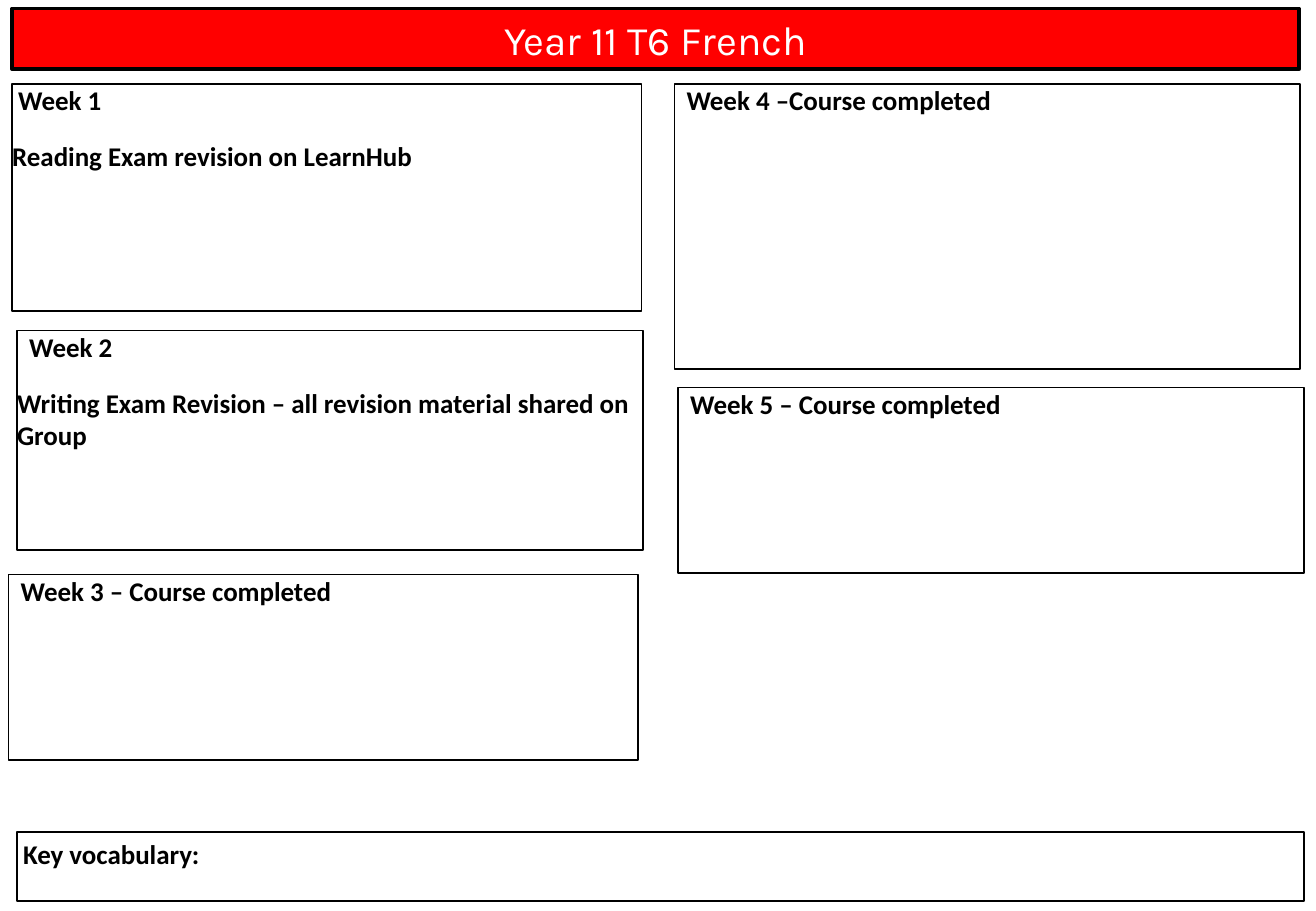
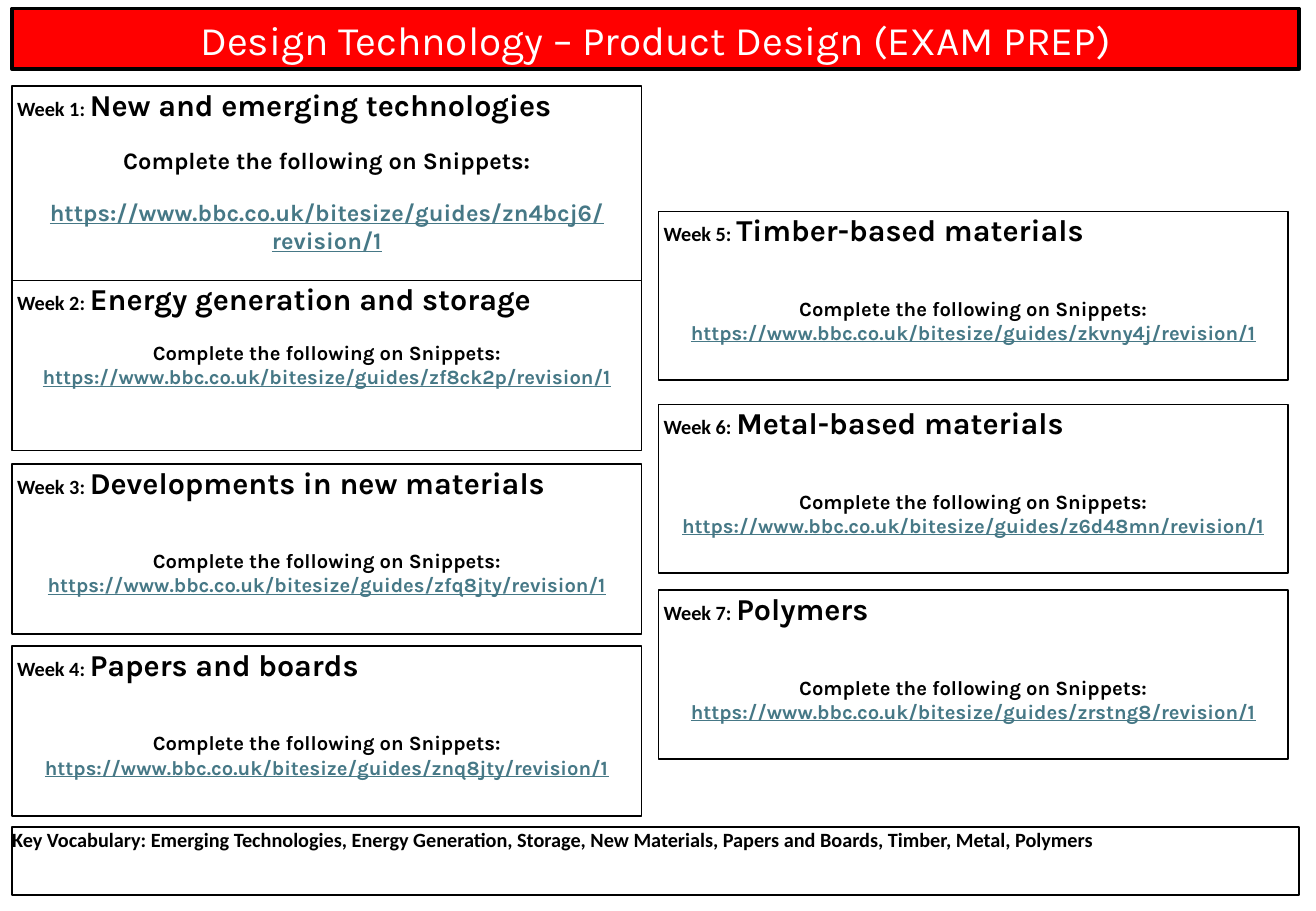
from dataclasses import dataclass

from pptx import Presentation
from pptx.dml.color import RGBColor
from pptx.enum.shapes import MSO_SHAPE
from pptx.enum.text import MSO_ANCHOR, MSO_AUTO_SIZE, PP_ALIGN
from pptx.util import Inches, Pt

RECTANGLE = MSO_SHAPE.RECTANGLE
TOP, MIDDLE = MSO_ANCHOR.TOP, MSO_ANCHOR.MIDDLE
NO_AUTOFIT = MSO_AUTO_SIZE.NONE
LEFT, CENTER = PP_ALIGN.LEFT, PP_ALIGN.CENTER
TITLE_ONLY = 5


@dataclass(frozen=True)
class Theme:
    """Colours, fonts, type sizes and line widths of the planner."""
    band: RGBColor = RGBColor(0xFF, 0x00, 0x00)
    ink: RGBColor = RGBColor(0x00, 0x00, 0x00)
    paper: RGBColor = RGBColor(0xFF, 0xFF, 0xFF)
    link: RGBColor = RGBColor(0x46, 0x78, 0x86)
    label_font: str = "Calibri"
    topic_font: str = "Karla"
    title_size: int = 24
    topic_size: int = 18
    label_size: int = 16
    lead_size: int = 14
    small_size: int = 12
    band_line: float = 2.25
    box_line: float = 1
    gap: float = 13.9
    wide_gap: float = 28.5


@dataclass(frozen=True)
class Box:
    """Place and size of a region, in inches."""
    left: float
    top: float
    width: float
    height: float

    def place(self, shape):
        """Move and size a shape to this box."""
        shape.left, shape.top = Inches(self.left), Inches(self.top)
        shape.width, shape.height = Inches(self.width), Inches(self.height)


THEME = Theme()
TITLE_BOX = Box(0.1, 0.07, 10.59, 0.5)
COLUMN_WIDTH = 5.18

FRENCH_WEEKS = [
    (Box(0.1, 0.69, 5.18, 1.87), 0.05, ["Week 1", "Reading Exam revision on LearnHub"]),
    (Box(0.14, 2.72, 5.15, 1.81), 0.1,
     ["Week 2", "Writing Exam Revision – all revision material shared on Group"]),
    (Box(0.07, 4.73, 5.18, 1.53), 0.1, ["Week 3 – Course completed"]),
    (Box(5.55, 0.69, 5.15, 2.35), 0.1, ["Week 4 –Course completed"]),
    (Box(5.58, 3.19, 5.15, 1.53), 0.1, ["Week 5 – Course completed"]),
]

DESIGN_WEEKS = [
    (0.1, 0.71, 1.6, "New and emerging technologies", "zn4bcj6"),
    (0.1, 2.31, 1.4, "Energy generation and storage", "zf8ck2p"),
    (0.1, 3.82, 1.4, "Developments in new materials", "zfq8jty"),
    (0.1, 5.32, 1.4, "Papers and boards", "znq8jty"),
    (5.42, 1.74, 1.39, "Timber-based materials", "zkvny4j"),
    (5.42, 3.33, 1.39, "Metal-based materials", "z6d48mn"),
    (5.42, 4.86, 1.39, "Polymers", "zrstng8"),
]


def add_run(paragraph, text, size, font, color=THEME.ink, bold=True, underline=None):
    """Add one formatted run to a paragraph."""
    run = paragraph.add_run()
    run.text = text
    run.font.size = Pt(size)
    run.font.name = font
    run.font.bold = bold
    run.font.underline = underline
    run.font.color.rgb = color


def add_paragraph(frame, space_before=0, alignment=LEFT, indent=0):
    """Return the frame's next paragraph, using the empty first one if unused."""
    first = frame.paragraphs[0]
    paragraph = frame.add_paragraph() if first.runs else first
    paragraph.alignment = alignment
    if space_before:
        paragraph.space_before = Pt(space_before)
    if indent:
        paragraph._p.get_or_add_pPr().set("marL", str(Inches(indent)))
    return paragraph


def add_titled_slide(presentation, title):
    """Add a slide with its title in the red band."""
    slide = presentation.slides.add_slide(presentation.slide_layouts[TITLE_ONLY])
    band = slide.shapes.title
    TITLE_BOX.place(band)
    band.fill.solid()
    band.fill.fore_color.rgb = THEME.band
    band.line.color.rgb = THEME.ink
    band.line.width = Pt(THEME.band_line)
    frame = band.text_frame
    frame.auto_size = NO_AUTOFIT
    frame.vertical_anchor = MIDDLE
    paragraph = add_paragraph(frame, alignment=CENTER)
    add_run(paragraph, title, THEME.title_size, THEME.topic_font, THEME.paper, bold=False)
    return slide


def add_outlined_box(slide, box, top_inset=0):
    """Add an unfilled outlined rectangle and return its text frame."""
    shape = slide.shapes.add_shape(RECTANGLE, 0, 0, 0, 0)
    box.place(shape)
    shape.shadow.inherit = False
    shape.fill.background()
    shape.line.color.rgb = THEME.ink
    shape.line.width = Pt(THEME.box_line)
    frame = shape.text_frame
    frame.word_wrap = True
    frame.vertical_anchor = TOP
    frame.margin_left = frame.margin_right = frame.margin_bottom = 0
    frame.margin_top = Inches(top_inset)
    return frame


def add_label_box(slide, box, lines, size, indent=0, top_inset=0):
    """Add a box of bold lines, the first of them indented."""
    frame = add_outlined_box(slide, box, top_inset)
    for index, line in enumerate(lines):
        if index == 0:
            paragraph = add_paragraph(frame, indent=indent)
        else:
            paragraph = add_paragraph(frame, THEME.gap)
        add_run(paragraph, line, size, THEME.label_font)


def add_topic_box(slide, box, week, topic, guide, size, prompt_gap, link_gap):
    """Add a week's topic with a centred prompt and guide address."""
    frame = add_outlined_box(slide, box)
    heading = add_paragraph(frame, indent=0.04)
    add_run(heading, f"Week {week}: ", THEME.small_size, THEME.label_font)
    add_run(heading, topic, THEME.topic_size, THEME.topic_font)
    prompt = add_paragraph(frame, prompt_gap, CENTER)
    add_run(prompt, "Complete the following on Snippets:", size, THEME.topic_font)
    address = add_paragraph(frame, link_gap, CENTER)
    add_run(address, f"https://www.bbc.co.uk/bitesize/guides/{guide}/revision/1",
            size, THEME.topic_font, THEME.link, underline=True)


def build_french_slide(presentation):
    """Build the French planner."""
    slide = add_titled_slide(presentation, "Year 11 T6 French")
    for box, indent, lines in FRENCH_WEEKS:
        add_label_box(slide, box, lines, THEME.label_size, indent)
    add_label_box(slide, Box(0.14, 6.85, 10.59, 0.57), ["Key vocabulary:"],
                  THEME.label_size, indent=0.05, top_inset=0.05)


def build_design_slide(presentation):
    """Build the Design Technology planner."""
    slide = add_titled_slide(presentation, "Design Technology – Product Design (EXAM PREP)")
    for week, (left, top, height, topic, guide) in enumerate(DESIGN_WEEKS, start=1):
        size = THEME.lead_size if week == 1 else THEME.small_size
        prompt_gap = THEME.gap if week <= 2 else THEME.wide_gap
        link_gap = THEME.gap if week == 1 else 0
        add_topic_box(slide, Box(left, top, COLUMN_WIDTH, height), week, topic, guide,
                      size, prompt_gap, link_gap)
    vocabulary = ("Key Vocabulary: Emerging Technologies, Energy Generation, Storage, "
                  "New Materials, Papers and Boards, Timber, Metal, Polymers")
    add_label_box(slide, Box(0.1, 6.81, 10.59, 0.56), [vocabulary], THEME.small_size)


def main():
    """Build and save the presentation."""
    presentation = Presentation()
    presentation.slide_width = Inches(10.83)
    presentation.slide_height = Inches(7.5)
    build_french_slide(presentation)
    build_design_slide(presentation)
    presentation.save("out.pptx")


if __name__ == "__main__":
    main()
